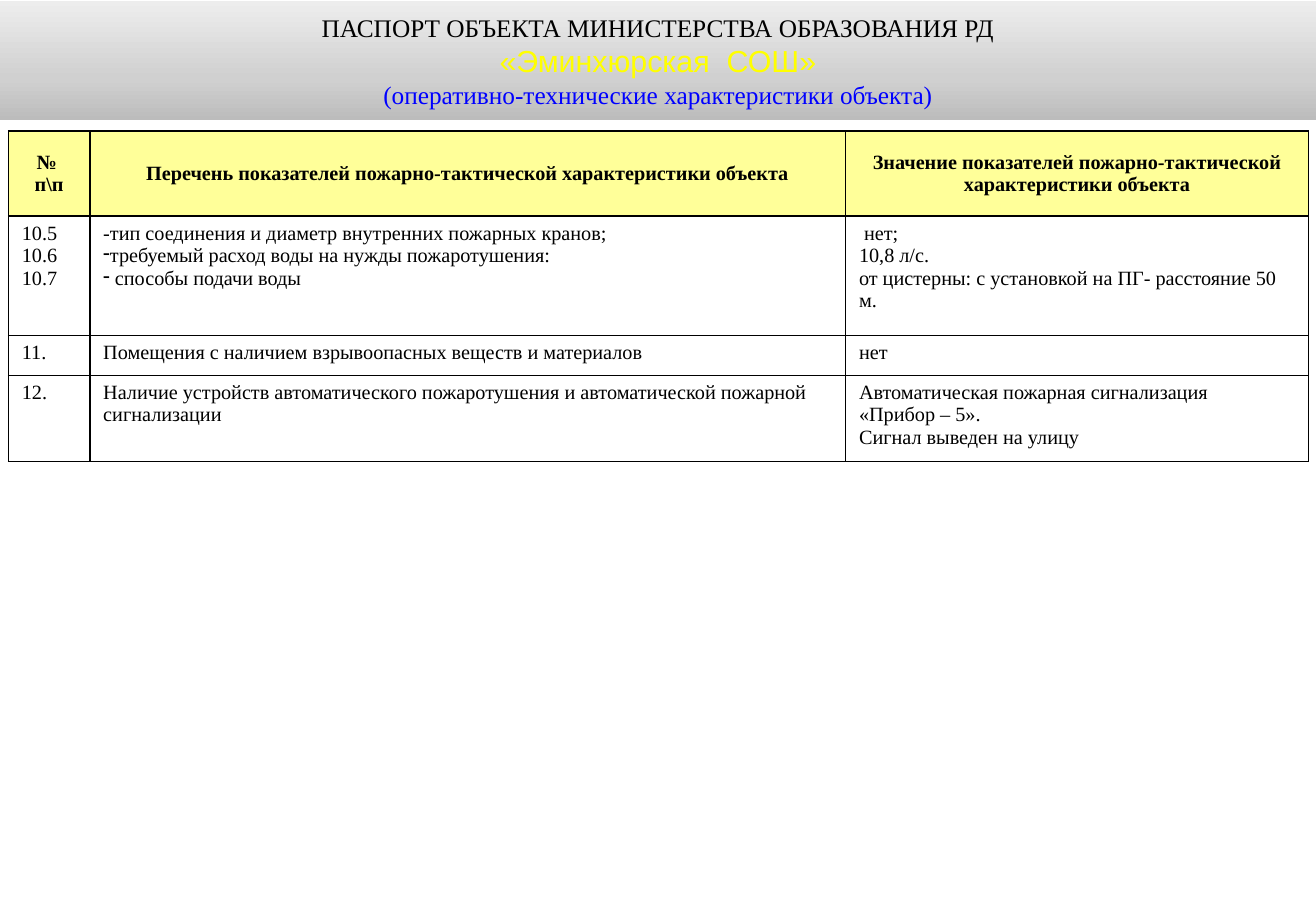
import copy

import pptx
import pptx.dml.color
import pptx.enum.shapes
import pptx.enum.text
import pptx.oxml
import pptx.oxml.ns
import pptx.util
from pptx.util import Inches

COLORS = {
    "black": "000000",
    "white": "FFFFFF",
    "yellow": "FFFF00",
    "blue": "0000FF",
    "header": "FFFF99",
}
BANNER_STOPS = [(0, "BCBCBC"), (0.35, "D0D0D0"), (1, "EDEDED")]
SERIF = "Times New Roman"
BULLET = "• "  # marks a paragraph that gets a dash bullet

BANNER_LINES = [
    ("ПАСПОРТ ОБЪЕКТА МИНИСТЕРСТВА ОБРАЗОВАНИЯ РД", 15, SERIF, "black"),
    ("«Эминхюрская  СОШ»", 18, "Arial", "yellow"),
    ("(оперативно-технические характеристики объекта)", 15, SERIF, "blue"),
]
COLUMN_WIDTHS = [0.67, 6.22, 3.81]
ROW_HEIGHTS = [0.7, 0.98, 0.33, 0.71]
ROWS = [
    [
        ["№ ", "п\\п"],
        ["Перечень показателей пожарно-тактической характеристики объекта"],
        ["Значение показателей пожарно-тактической характеристики объекта"],
    ],
    [
        ["10.5", "10.6", "10.7"],
        [
            "-тип соединения и диаметр внутренних пожарных кранов;",
            BULLET + "требуемый расход воды на нужды пожаротушения:",
            BULLET + " способы подачи воды",
        ],
        [" нет;", "10,8 л/с.", "от цистерны: с установкой на ПГ- расстояние 50 м."],
    ],
    [
        ["11."],
        ["Помещения с наличием взрывоопасных веществ и материалов"],
        ["нет"],
    ],
    [
        ["12."],
        ["Наличие устройств автоматического пожаротушения и автоматической пожарной сигнализации"],
        ["Автоматическая пожарная сигнализация", "«Прибор – 5».", "Сигнал выведен на улицу"],
    ],
]


def rgb(hex_string):
    return pptx.dml.color.RGBColor.from_string(hex_string)


def style_paragraph(paragraph, size, font_name, color, bold=False, centered=False):
    paragraph.font.size = pptx.util.Pt(size)
    paragraph.font.name = font_name
    paragraph.font.bold = bold
    paragraph.font.color.rgb = rgb(COLORS[color])
    align = pptx.enum.text.PP_ALIGN
    paragraph.alignment = align.CENTER if centered else align.LEFT


def add_dash_bullet(paragraph):
    properties = paragraph._p.get_or_add_pPr()
    properties.set("marL", "0")
    properties.set("indent", "0")
    bullet = pptx.oxml.parse_xml(f'<a:buChar {pptx.oxml.ns.nsdecls("a")} char="-"/>')
    properties.insert_element_before(bullet, "a:tabLst", "a:defRPr", "a:extLst")


def add_cell_borders(cell):
    properties = cell._tc.get_or_add_tcPr()
    for side in ("lnL", "lnR", "lnT", "lnB"):
        properties.append(pptx.oxml.parse_xml(
            f'<a:{side} {pptx.oxml.ns.nsdecls("a")} w="12700"><a:solidFill>'
            f'<a:srgbClr val="{COLORS["black"]}"/></a:solidFill></a:{side}>'
        ))


def fill_cell(cell, lines, is_header):
    add_cell_borders(cell)
    cell.fill.solid()
    cell.fill.fore_color.rgb = rgb(COLORS["header" if is_header else "white"])
    cell.margin_left = cell.margin_right = Inches(0.11)
    cell.margin_top = cell.margin_bottom = Inches(0.05)
    anchor = pptx.enum.text.MSO_ANCHOR
    cell.vertical_anchor = anchor.MIDDLE if is_header else anchor.TOP
    cell.text = "\n".join(line.removeprefix(BULLET) for line in lines)
    for paragraph, line in zip(cell.text_frame.paragraphs, lines):
        style_paragraph(paragraph, 12, SERIF, "black", bold=is_header, centered=is_header)
        if line.startswith(BULLET):
            add_dash_bullet(paragraph)


def add_indicator_table(slide):
    frame = slide.shapes.add_table(
        len(ROWS), len(COLUMN_WIDTHS), Inches(0.07), Inches(1.08),
        Inches(sum(COLUMN_WIDTHS)), Inches(sum(ROW_HEIGHTS)),
    )
    table = frame.table
    for column, width in zip(table.columns, COLUMN_WIDTHS):
        column.width = Inches(width)
    for row_index, (row, height) in enumerate(zip(table.rows, ROW_HEIGHTS)):
        row.height = Inches(height)
        for cell, lines in zip(row.cells, ROWS[row_index]):
            fill_cell(cell, lines, is_header=row_index == 0)


def fill_with_gradient(shape, stops):
    """Run the colour stops from the bottom of the shape to its top."""
    shape.fill.gradient()
    shape.fill.gradient_angle = 90
    stop_list = shape._element.find(".//" + pptx.oxml.ns.qn("a:gsLst"))
    while len(stop_list) < len(stops):
        stop_list.append(copy.deepcopy(stop_list[0]))
    for stop, (position, color) in zip(shape.fill.gradient_stops, stops):
        stop.position = position
        stop.color.rgb = rgb(color)


def add_banner(slide):
    banner = slide.shapes.add_shape(
        pptx.enum.shapes.MSO_SHAPE.RECTANGLE,
        Inches(0), Inches(0.01), Inches(10.83), Inches(0.98),
    )
    banner.shadow.inherit = False
    banner.line.fill.background()
    fill_with_gradient(banner, BANNER_STOPS)
    text_frame = banner.text_frame
    text_frame.word_wrap = True
    text_frame.vertical_anchor = pptx.enum.text.MSO_ANCHOR.MIDDLE
    text_frame.margin_left = text_frame.margin_right = Inches(0.09)
    text_frame.margin_top = text_frame.margin_bottom = Inches(0.05)
    text_frame.text = "\n".join(line[0] for line in BANNER_LINES)
    for paragraph, (_, size, font_name, color) in zip(text_frame.paragraphs, BANNER_LINES):
        style_paragraph(paragraph, size, font_name, color, centered=True)


def main():
    presentation = pptx.Presentation()
    presentation.slide_width = Inches(10.83)
    presentation.slide_height = Inches(7.5)
    slide = presentation.slides.add_slide(presentation.slide_layouts[6])
    add_indicator_table(slide)
    add_banner(slide)
    presentation.save("out.pptx")


if __name__ == "__main__":
    main()
